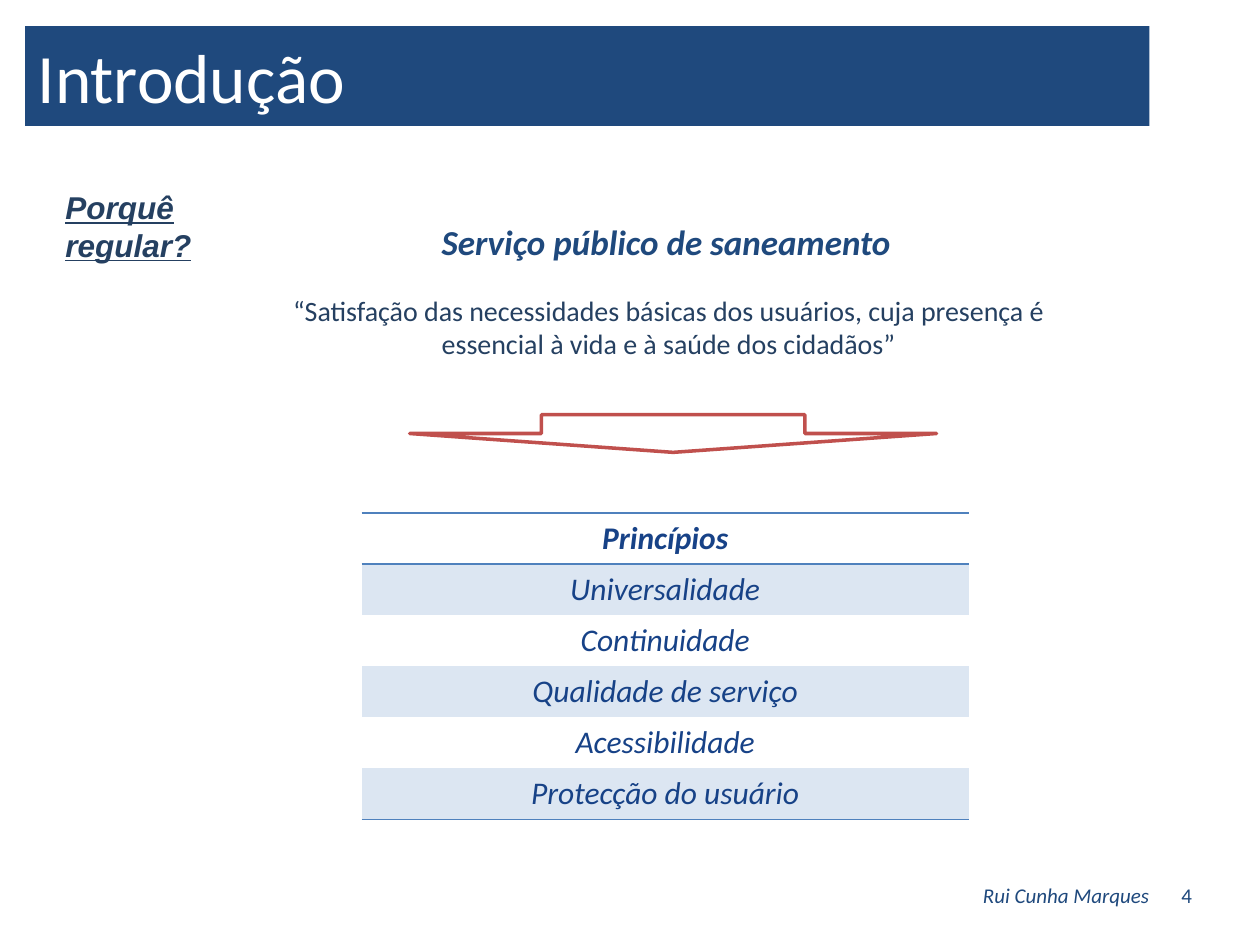
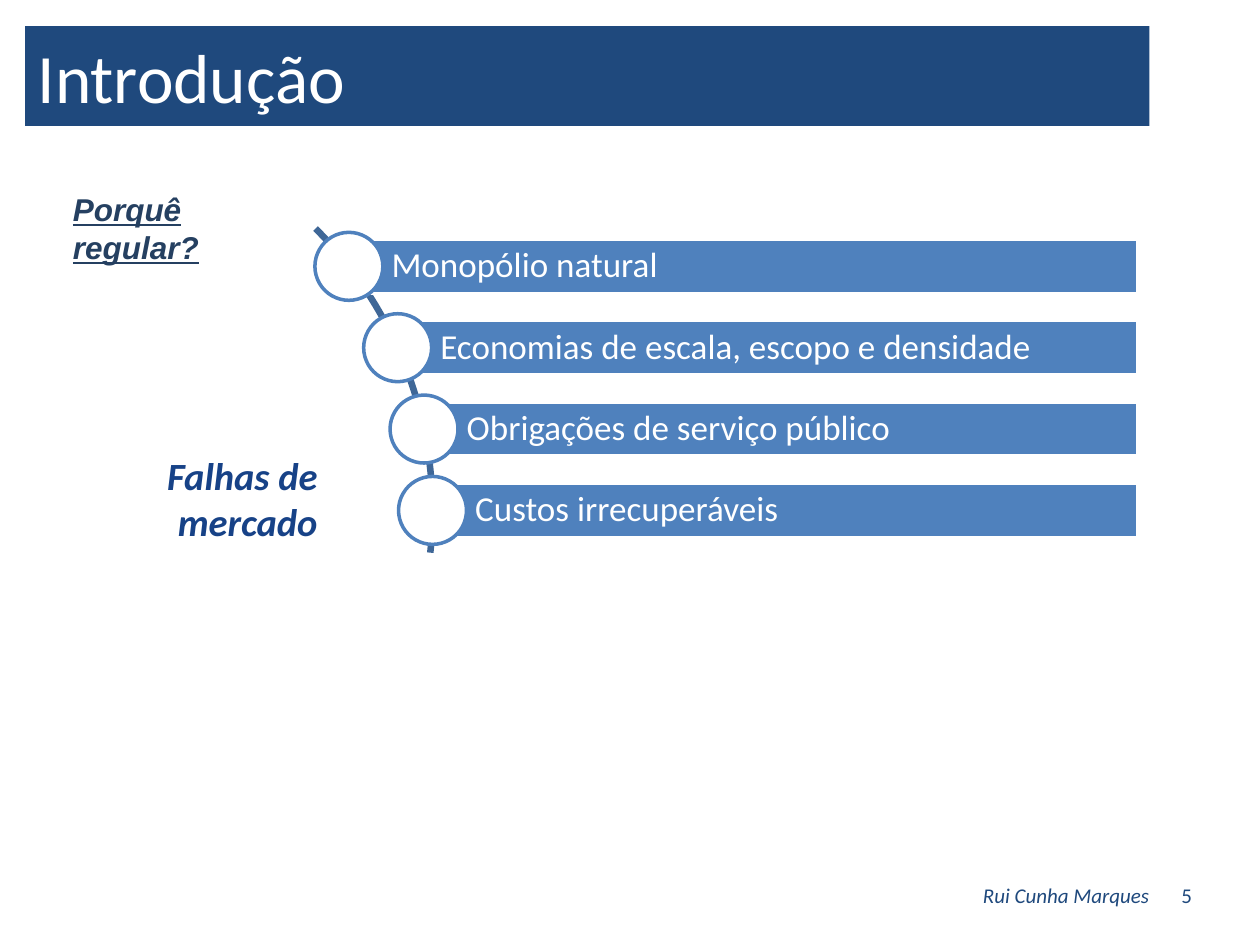
"""Build two introduction slides on why sanitation services are regulated."""
import math

import pptx
import pptx.dml.color
import pptx.enum.shapes
import pptx.enum.text
import pptx.oxml.ns
import pptx.util
from lxml import etree

Cm = pptx.util.Cm
Pt = pptx.util.Pt
SHAPE = pptx.enum.shapes.MSO_SHAPE
ALIGN = pptx.enum.text.PP_ALIGN
ANCHOR = pptx.enum.text.MSO_ANCHOR

NAVY = "1F497D"
INK = "254061"
ROYAL = "174287"
BLUE = "4F81BD"
PALE = "DCE6F2"
ARC_BLUE = "3F6797"
RED = "C0504D"
WHITE = "FFFFFF"

PRINCIPLES = ["Princípios", "Universalidade", "Continuidade",
              "Qualidade de serviço", "Acessibilidade", "Protecção do usuário"]
FAILURES = ["Monopólio natural", "Economias de escala, escopo e densidade",
            "Obrigações de serviço público", "Custos irrecuperáveis"]


def colour(value):
    """Turn a hex string into a colour."""
    return pptx.dml.color.RGBColor.from_string(value)


def write(frame, text, size, ink, align=ALIGN.LEFT, font="Calibri",
          bold=False, italic=False, underline=False):
    """Write one styled run into the first paragraph of a text frame."""
    para = frame.paragraphs[0]
    para.alignment = align
    span = para.add_run()
    span.text = text
    span.font.name = font
    span.font.size = Pt(size)
    span.font.color.rgb = colour(ink)
    span.font.bold = bold
    span.font.italic = italic
    span.font.underline = underline


def add_text(page, place, text, size, ink, anchor=ANCHOR.TOP, **style):
    """Add a wrapping text box; place is left, top, width, height in cm."""
    box = page.shapes.add_textbox(*map(Cm, place))
    box.text_frame.word_wrap = True
    box.text_frame.vertical_anchor = anchor
    write(box.text_frame, text, size, ink, **style)


def add_block(page, kind, place, fill, line=None):
    """Add a flat preset shape with an optional 2 pt outline."""
    block = page.shapes.add_shape(kind, *map(Cm, place))
    block.shadow.inherit = False
    block.fill.solid()
    block.fill.fore_color.rgb = colour(fill)
    if line:
        block.line.color.rgb = colour(line)
        block.line.width = Pt(2)
    else:
        block.line.fill.background()
    block.text_frame.word_wrap = True
    block.text_frame.vertical_anchor = ANCHOR.MIDDLE
    return block


def add_page(deck, number, question_left, question_top):
    """Add a page with the title band, the question and the footer."""
    page = deck.slides.add_slide(deck.slide_layouts[6])
    band = add_block(page, SHAPE.RECTANGLE, (0.51, 0.53, 22.66, 2.01), NAVY)
    write(band.text_frame, "Introdução", 39.6, WHITE)
    add_text(page, (question_left, question_top, 4.98, 2.31), "Porquê regular?",
             18, INK, font="Arial", bold=True, italic=True, underline=True)
    for left, text, italic in ((17.5, "Rui Cunha Marques", True),
                               (18.36, str(number), False)):
        add_text(page, (left, 17.53, 5.92, 1.02), text, 12, NAVY,
                 ANCHOR.MIDDLE, align=ALIGN.RIGHT, italic=italic)
    return page


def set_borders(cell, ruled):
    """Rule the named sides of a cell in blue and clear the others."""
    properties = cell._tc.get_or_add_tcPr()
    for side in ("lnL", "lnR", "lnT", "lnB"):
        border = etree.SubElement(properties, pptx.oxml.ns.qn(f"a:{side}"), w=str(Pt(1)))
        if side in ruled:
            fill = etree.SubElement(border, pptx.oxml.ns.qn("a:solidFill"))
            etree.SubElement(fill, pptx.oxml.ns.qn("a:srgbClr"), val=BLUE)
        else:
            etree.SubElement(border, pptx.oxml.ns.qn("a:noFill"))


def add_principles(page):
    """Add the one-column table of principles with alternate shading."""
    row_height = 1.03
    table = page.shapes.add_table(len(PRINCIPLES), 1, Cm(7.29), Cm(10.34), Cm(12.24),
                                  Cm(row_height * len(PRINCIPLES))).table
    table.horz_banding = False
    ruled = {0: ("lnT", "lnB"), 1: ("lnT",), len(PRINCIPLES) - 1: ("lnB",)}
    for index, text in enumerate(PRINCIPLES):
        table.rows[index].height = Cm(row_height)
        cell = table.cell(index, 0)
        set_borders(cell, ruled.get(index, ()))
        if index % 2:
            cell.fill.solid()
            cell.fill.fore_color.rgb = colour(PALE)
        else:
            cell.fill.background()
        write(cell.text_frame, text, 18, ROYAL, ALIGN.CENTER,
              bold=index == 0, italic=True)


def add_arc(page, centre_x, centre_y, radius):
    """Draw the open arc that links the circles."""
    points = [(Cm(centre_x + radius * math.cos(math.radians(angle))),
               Cm(centre_y + radius * math.sin(math.radians(angle))))
              for angle in range(-45, 7)]
    builder = page.shapes.build_freeform(*points[0])
    builder.add_line_segments(points[1:], close=False)
    arc = builder.convert_to_shape()
    arc.shadow.inherit = False
    arc.fill.background()
    arc.line.color.rgb = colour(ARC_BLUE)
    arc.line.width = Pt(3.75)


def add_failures(page):
    """Add the market failures as bars starting from circles on an arc."""
    centre_x, centre_y, radius = 0.67, 10.3, 8.05
    first, step, right = 5.37, 1.64, 22.94
    bar_height, diameter = 1.09, 1.37
    add_arc(page, centre_x, centre_y, radius)
    for index, text in enumerate(FAILURES):
        y = first + index * step
        x = centre_x + math.sqrt(radius ** 2 - (y - centre_y) ** 2)
        bar = add_block(page, SHAPE.RECTANGLE,
                        (x, y - bar_height / 2, right - x, bar_height), BLUE, WHITE)
        frame = bar.text_frame
        frame.margin_left = Cm(0.86)
        frame.margin_right = frame.margin_top = frame.margin_bottom = Cm(0.15)
        frame.paragraphs[0].line_spacing = 0.9
        write(frame, text, 20, WHITE)
        add_block(page, SHAPE.OVAL, (x - diameter / 2, y - diameter / 2,
                                     diameter, diameter), WHITE, BLUE)


def main():
    """Build and save the deck."""
    deck = pptx.Presentation()
    deck.slide_width, deck.slide_height = Cm(25.4), Cm(19.05)

    page = add_page(deck, 4, 1.07, 3.66)
    add_text(page, (5.49, 4.32, 15.88, 1.12), "Serviço público de saneamento",
             20, NAVY, align=ALIGN.CENTER, bold=True, italic=True)
    add_text(page, (5.11, 5.79, 16.74, 1.63),
             "“Satisfação das necessidades básicas dos usuários, cuja presença é "
             "essencial à vida e à saúde dos cidadãos”", 16, INK, align=ALIGN.CENTER)
    add_block(page, SHAPE.DOWN_ARROW, (8.26, 8.36, 10.62, 0.76), WHITE, RED)
    add_principles(page)

    page = add_page(deck, 5, 1.22, 3.71)
    add_failures(page)
    add_text(page, (2.13, 8.99, 4.52, 2.13), "Falhas de mercado", 22, ROYAL,
             align=ALIGN.RIGHT, bold=True, italic=True)

    deck.save("out.pptx")


if __name__ == "__main__":
    main()
